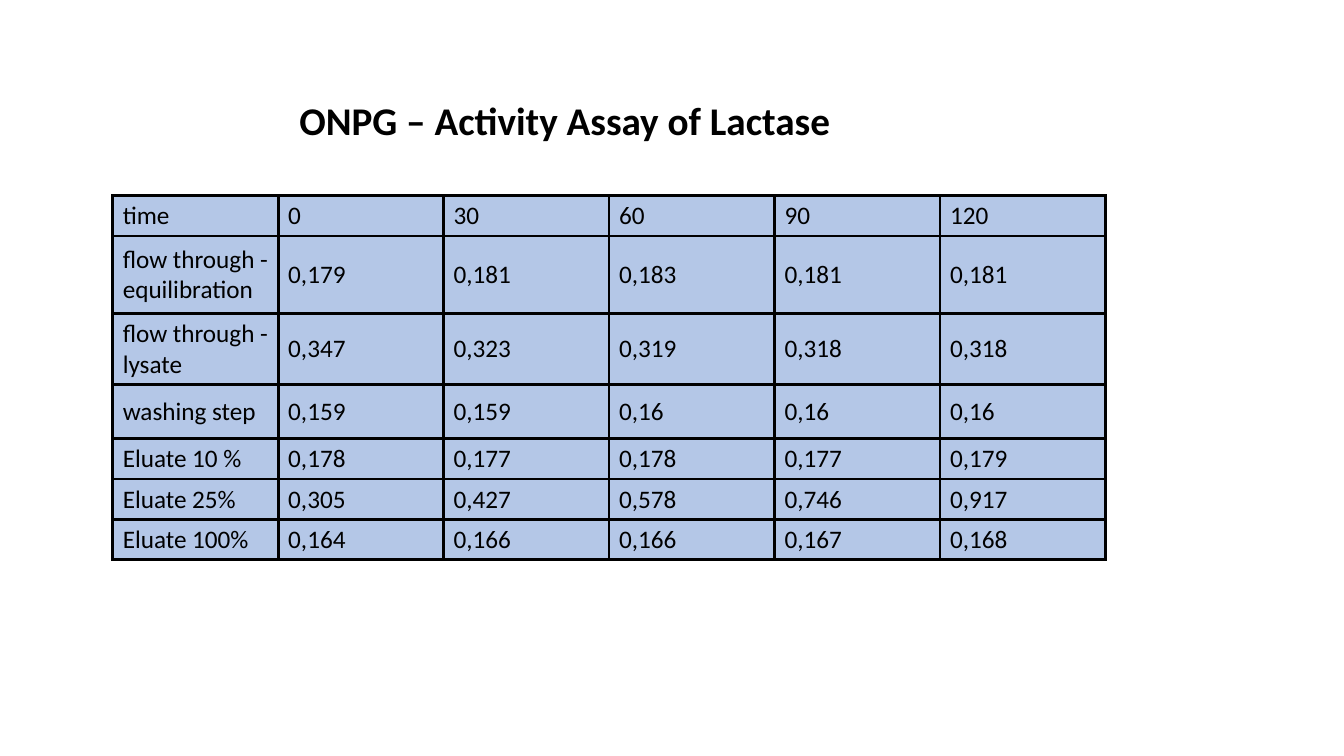
from lxml.etree import SubElement
from pptx import Presentation
from pptx.dml.color import RGBColor
from pptx.enum.text import MSO_ANCHOR, MSO_AUTO_SIZE, PP_ALIGN
from pptx.oxml.ns import qn
from pptx.util import Cm, Pt

COLOURS = {"text": "000000", "border": "000000", "cell": "B4C7E7"}
FONT = "Calibri"
BORDER_WIDTH = Pt(2.25)
COLUMN_WIDTH = Cm(4.17)
ROW_HEIGHTS = [0.79, 1.96, 1.37, 1.37, 0.79, 0.79, 0.79]

ACTIVITY = [
    ["time", "0", "30", "60", "90", "120"],
    ["flow through - equilibration", "0,179", "0,181", "0,183", "0,181", "0,181"],
    ["flow through - lysate", "0,347", "0,323", "0,319", "0,318", "0,318"],
    ["washing step", "0,159", "0,159", "0,16", "0,16", "0,16"],
    ["Eluate 10 %", "0,178", "0,177", "0,178", "0,177", "0,179"],
    ["Eluate 25%", "0,305", "0,427", "0,578", "0,746", "0,917"],
    ["Eluate 100%", "0,164", "0,166", "0,166", "0,167", "0,168"],
]


def style_paragraph(para, size, bold=False):
    para.alignment = PP_ALIGN.LEFT
    para.font.name = FONT
    para.font.size = Pt(size)
    para.font.bold = bold
    para.font.color.rgb = RGBColor.from_string(COLOURS["text"])


def add_title(page, text):
    title = page.shapes.title
    title.left, title.top = Cm(7.29), Cm(2.29)
    title.width, title.height = Cm(18.62), Cm(1.45)
    frame = title.text_frame
    frame.text = text
    frame.word_wrap = True
    frame.auto_size = MSO_AUTO_SIZE.SHAPE_TO_FIT_TEXT
    frame.vertical_anchor = MSO_ANCHOR.TOP
    style_paragraph(frame.paragraphs[0], 28, bold=True)


def set_borders(cell):
    # Border lines come before the fill in the cell properties
    properties = cell._tc.get_or_add_tcPr()
    for position, side in enumerate(("lnL", "lnR", "lnT", "lnB")):
        line = SubElement(properties, qn(f"a:{side}"), w=str(BORDER_WIDTH))
        fill = SubElement(line, qn("a:solidFill"))
        SubElement(fill, qn("a:srgbClr"), val=COLOURS["border"])
        properties.insert(position, line)


def fill_cell(cell, text):
    cell.text = text
    cell.vertical_anchor = MSO_ANCHOR.MIDDLE
    cell.fill.solid()
    cell.fill.fore_color.rgb = RGBColor.from_string(COLOURS["cell"])
    style_paragraph(cell.text_frame.paragraphs[0], 18)
    set_borders(cell)


def add_activity_table(page, rows):
    column_count = len(rows[0])
    table = page.shapes.add_table(
        len(rows), column_count, Cm(2.84), Cm(4.93),
        COLUMN_WIDTH * column_count, Cm(sum(ROW_HEIGHTS)),
    ).table
    table.horz_banding = False
    table.first_row = False
    for column in table.columns:
        column.width = COLUMN_WIDTH
    for row, height, texts in zip(table.rows, ROW_HEIGHTS, rows):
        row.height = Cm(height)
        for cell, text in zip(row.cells, texts):
            fill_cell(cell, text)


def main():
    deck = Presentation()
    deck.slide_width, deck.slide_height = Cm(33.87), Cm(19.05)
    page = deck.slides.add_slide(deck.slide_layouts.get_by_name("Title Only"))

    # Measured activity of each fraction over time
    add_activity_table(page, ACTIVITY)

    # Heading above the table
    add_title(page, "ONPG – Activity Assay of Lactase")

    deck.save("out.pptx")


if __name__ == "__main__":
    main()
